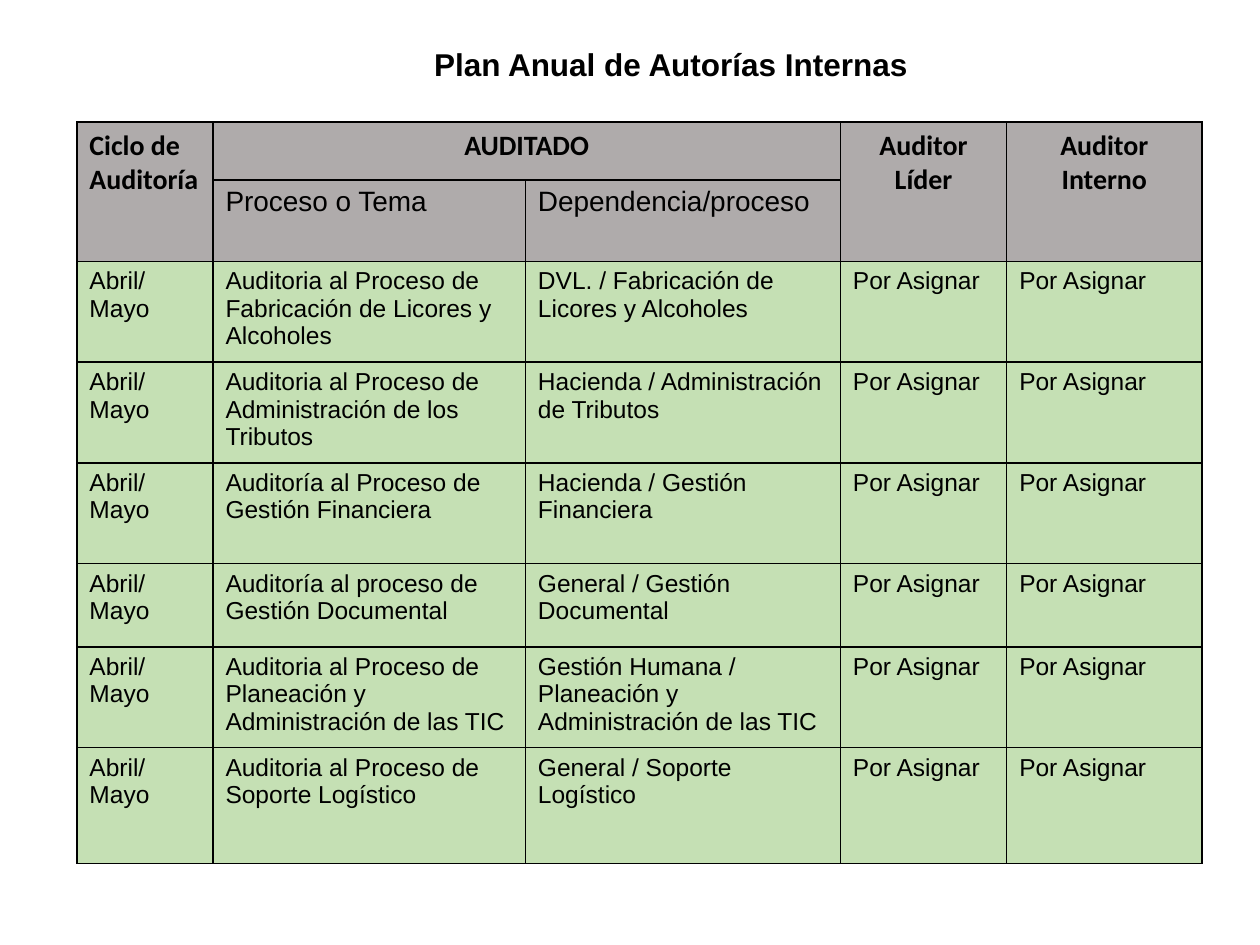
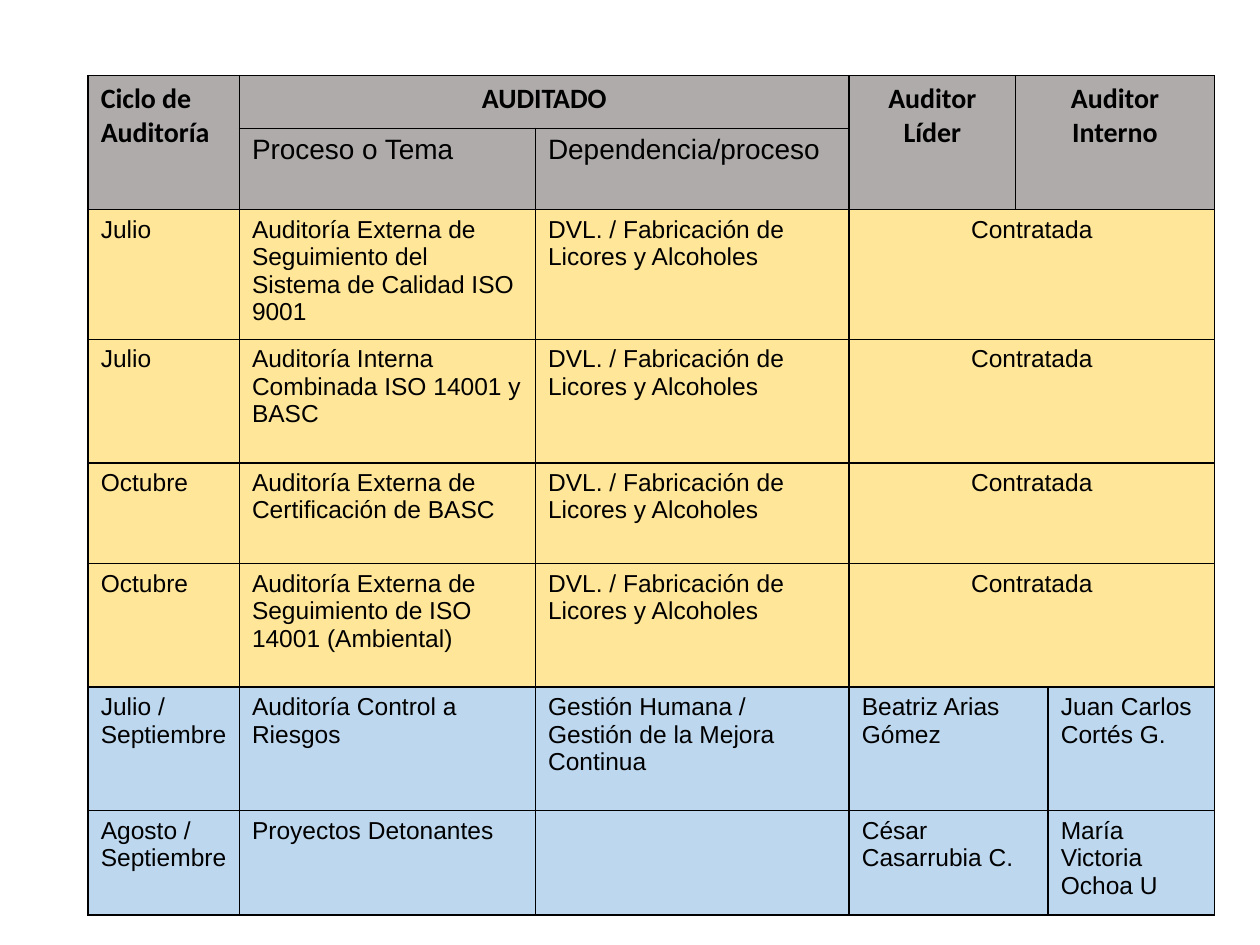
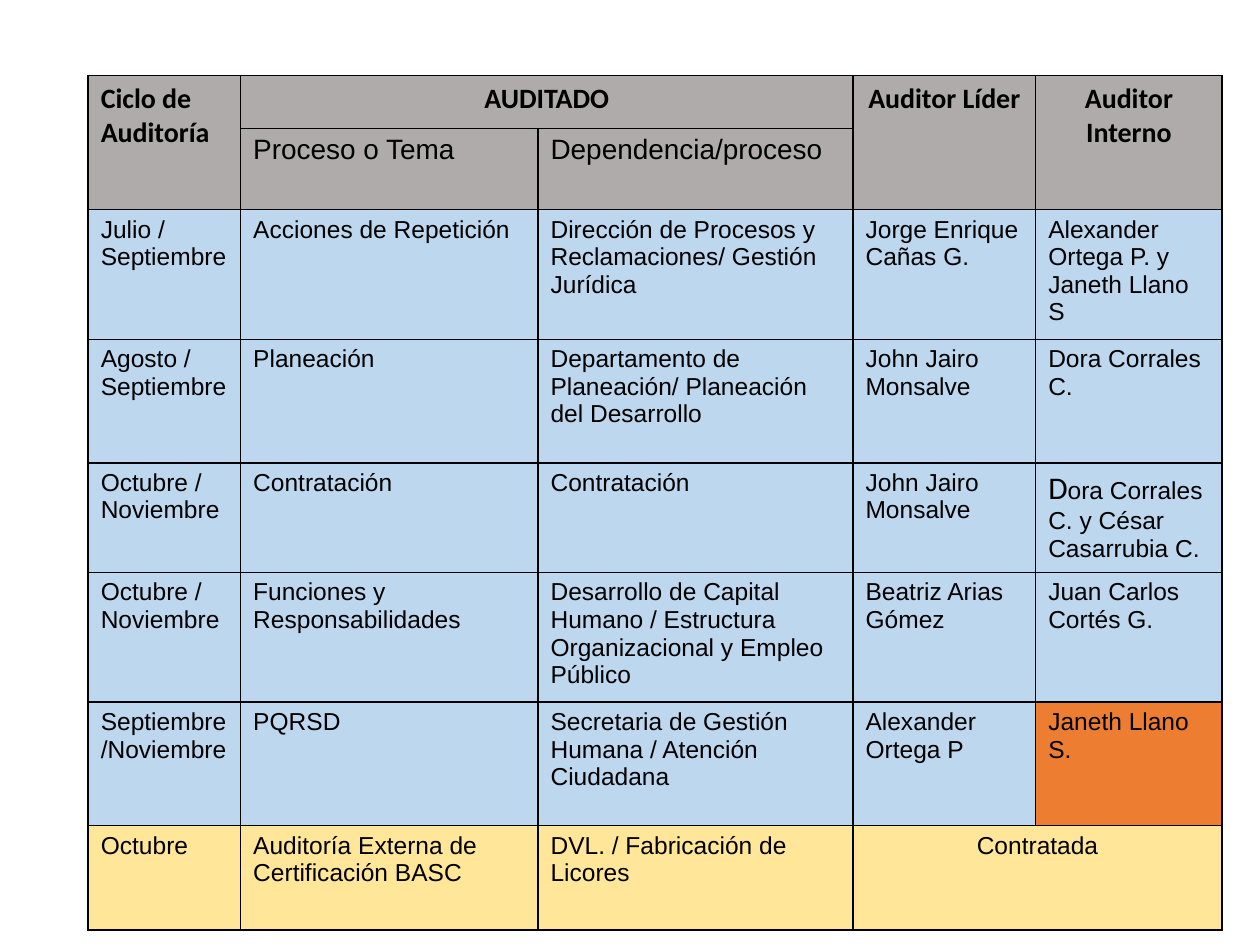
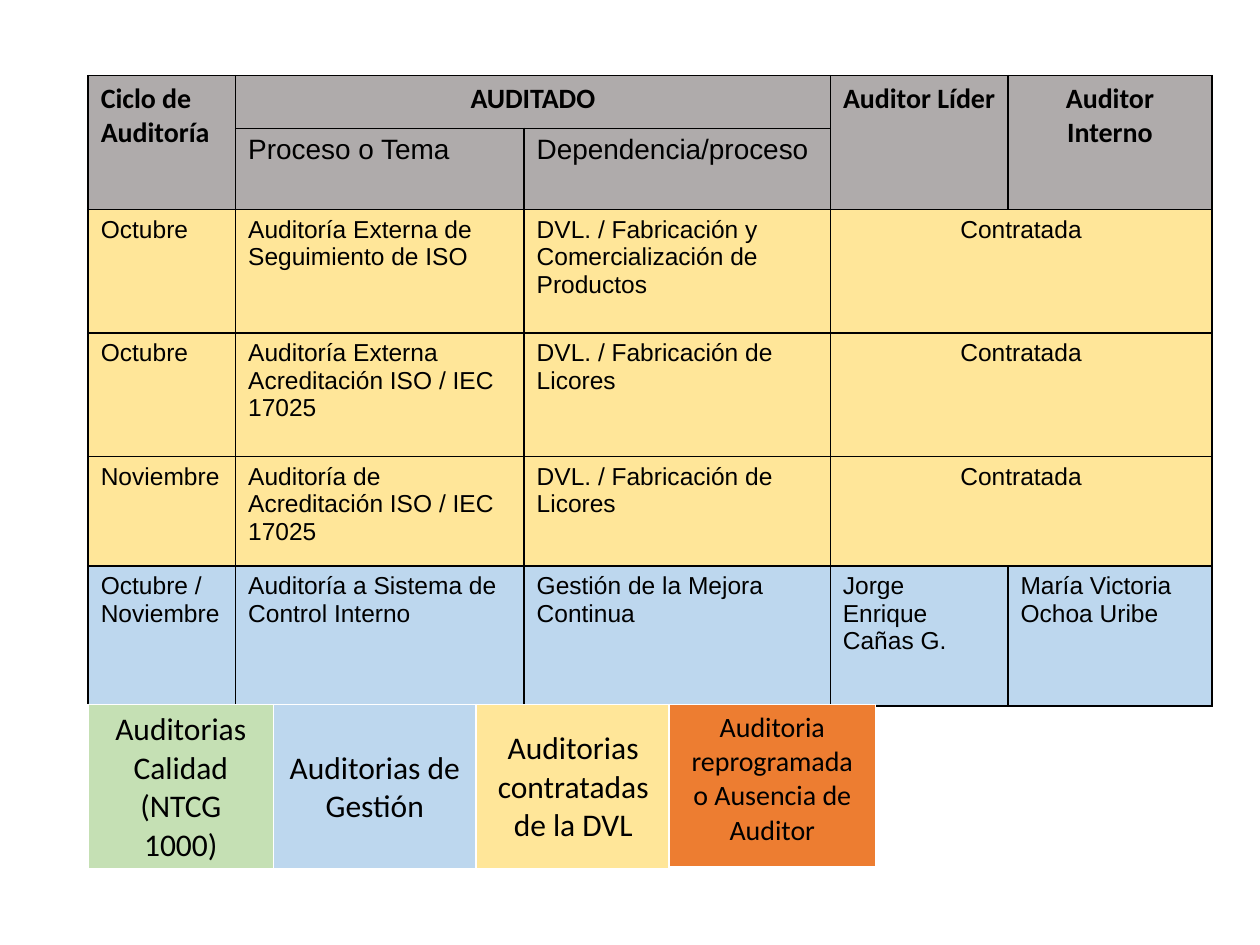
from dataclasses import dataclass

from lxml import etree
from pptx import Presentation
from pptx.dml.color import RGBColor
from pptx.enum.text import MSO_ANCHOR, PP_ALIGN
from pptx.oxml.ns import qn
from pptx.util import Inches, Pt

LEFT, CENTER = PP_ALIGN.LEFT, PP_ALIGN.CENTER
TOP, MIDDLE = MSO_ANCHOR.TOP, MSO_ANCHOR.MIDDLE
TITLE_LAYOUT, BLANK_LAYOUT = 5, 6


@dataclass(frozen=True)
class Theme:
    ink: str = "000000"
    paper: str = "FFFFFF"
    header: str = "AFABAB"
    quality: str = "C5E0B4"
    management: str = "BDD7EE"
    contracted: str = "FFE699"
    rescheduled: str = "ED7D31"
    body_font: str = "Arial"
    header_font: str = "Calibri"
    large: int = 18
    medium: int = 16
    small: int = 14


THEME = Theme()


@dataclass(frozen=True)
class Audit:
    fill: str
    cycle: str
    topic: str
    unit: str
    leader: str = "Contratada"
    auditor: str = ""
    auditor_fill: str = ""
    auditor_initial: str = ""


@dataclass(frozen=True)
class Plan:
    left: float
    top: float
    columns: tuple[float, ...]
    rows: tuple[float, ...]
    audits: tuple[Audit, ...]


@dataclass(frozen=True)
class LegendKey:
    text: str
    fill: str
    width: float


def quality_audit(topic: str, unit: str) -> Audit:
    return Audit(THEME.quality, "Abril/\nMayo", topic, unit, "Por Asignar", "Por Asignar")


def contracted_audit(cycle: str, topic: str, unit: str = "DVL. / Fabricación de Licores") -> Audit:
    return Audit(THEME.contracted, cycle, topic, unit)


def management_audit(cycle: str, topic: str, unit: str, leader: str, auditor: str, **extra: str) -> Audit:
    return Audit(THEME.management, cycle, topic, unit, leader, auditor, **extra)


SPIRITS = "DVL. / Fabricación de Licores y Alcoholes"

PLANS = (
    Plan(0.61, 0.97, (1.08, 2.48, 2.5, 1.32, 1.55),
         (0.46, 0.63, 0.8, 0.8, 0.8, 0.66, 0.8, 0.92), (
        quality_audit("Auditoria al Proceso de Fabricación de Licores y Alcoholes", SPIRITS),
        quality_audit("Auditoria al Proceso de Administración de los Tributos",
                      "Hacienda / Administración de Tributos"),
        quality_audit("Auditoría al Proceso de Gestión Financiera", "Hacienda / Gestión Financiera"),
        quality_audit("Auditoría al proceso de Gestión Documental", "General / Gestión Documental"),
        quality_audit("Auditoria al Proceso de Planeación y Administración de las TIC",
                      "Gestión Humana / Planeación y Administración de las TIC"),
        quality_audit("Auditoria al Proceso de Soporte Logístico", "General / Soporte Logístico"),
    )),
    Plan(0.7, 0.6, (1.2, 2.35, 2.49, 1.32, 0.26, 1.32),
         (0.42, 0.63, 1.03, 0.98, 0.8, 0.98, 0.98, 0.83), (
        contracted_audit("Julio", "Auditoría Externa de Seguimiento del Sistema de Calidad ISO 9001", SPIRITS),
        contracted_audit("Julio", "Auditoría Interna Combinada ISO 14001 y BASC", SPIRITS),
        contracted_audit("Octubre", "Auditoría Externa de Certificación de BASC", SPIRITS),
        contracted_audit("Octubre", "Auditoría Externa de Seguimiento de ISO 14001 (Ambiental)", SPIRITS),
        management_audit("Julio / Septiembre", "Auditoría Control a Riesgos",
                         "Gestión Humana / Gestión de la Mejora Continua",
                         "Beatriz Arias Gómez", "Juan Carlos Cortés G."),
        management_audit("Agosto / Septiembre", "Proyectos Detonantes", "",
                         "César Casarrubia C.", "María Victoria Ochoa U"),
    )),
    Plan(0.7, 0.6, (1.21, 2.36, 2.5, 1.45, 1.48),
         (0.42, 0.63, 1.03, 0.98, 0.87, 1.03, 0.98, 0.83), (
        management_audit("Julio / Septiembre", "Acciones de Repetición",
                         "Dirección de Procesos y Reclamaciones/ Gestión Jurídica",
                         "Jorge Enrique Cañas G.", "Alexander Ortega P. y Janeth Llano S"),
        management_audit("Agosto / Septiembre", "Planeación",
                         "Departamento de Planeación/ Planeación del Desarrollo",
                         "John Jairo Monsalve", "Dora Corrales C."),
        management_audit("Octubre / Noviembre", "Contratación", "Contratación", "John Jairo Monsalve",
                         "ora Corrales C. y César Casarrubia C.", auditor_initial="D"),
        management_audit("Octubre / Noviembre", "Funciones y Responsabilidades",
                         "Desarrollo de Capital Humano / Estructura Organizacional y Empleo Público",
                         "Beatriz Arias Gómez", "Juan Carlos Cortés G."),
        management_audit("Septiembre /Noviembre", "PQRSD",
                         "Secretaria de Gestión Humana / Atención Ciudadana",
                         "Alexander Ortega P", "Janeth Llano S.", auditor_fill=THEME.rescheduled),
        contracted_audit("Octubre", "Auditoría Externa de Certificación BASC"),
    )),
    Plan(0.7, 0.6, (1.17, 2.29, 2.43, 1.41, 1.62),
         (0.42, 0.63, 0.98, 0.98, 0.87, 1.11), (
        contracted_audit("Octubre", "Auditoría Externa de Seguimiento de ISO",
                         "DVL. / Fabricación y Comercialización de Productos"),
        contracted_audit("Octubre", "Auditoría Externa Acreditación ISO / IEC 17025"),
        contracted_audit("Noviembre", "Auditoría de Acreditación ISO / IEC 17025"),
        management_audit("Octubre / Noviembre", "Auditoría a Sistema de Control Interno",
                         "Gestión de la Mejora Continua",
                         "Jorge Enrique Cañas G.", "María Victoria Ochoa Uribe"),
    )),
)

LEGEND = (
    LegendKey("Auditorias Calidad (NTCG 1000)", THEME.quality, 1.47),
    LegendKey("Auditorias de Gestión", THEME.management, 1.61),
    LegendKey("Auditorias contratadas de la DVL", THEME.contracted, 1.54),
)
ABSENCE = LegendKey("Auditoria reprogramada o Ausencia de Auditor", THEME.rescheduled, 1.64)


def write_text(text_frame, text: str, *, size: int = THEME.small, font: str = THEME.body_font,
               bold: bool = False, align=LEFT, initial: str = "") -> None:
    for index, line in enumerate(text.split("\n")):
        paragraph = text_frame.add_paragraph() if index else text_frame.paragraphs[0]
        paragraph.alignment = align
        pieces = [(line, size, font)]
        if initial and not index:
            pieces.insert(0, (initial, THEME.large, THEME.header_font))
        for piece, piece_size, piece_font in pieces:
            if not piece:
                continue
            run = paragraph.add_run()
            run.text = piece
            run.font.size = Pt(piece_size)
            run.font.name = piece_font
            run.font.bold = bold
            run.font.color.rgb = RGBColor.from_string(THEME.ink)


def style_cell(cell, fill: str, border: str, bottom_width: int) -> None:
    properties = cell._tc.get_or_add_tcPr()
    for side, width in (("L", 1), ("R", 1), ("T", 1), ("B", bottom_width)):
        line = etree.SubElement(properties, qn(f"a:ln{side}"), w=str(Pt(width)))
        solid = etree.SubElement(line, qn("a:solidFill"))
        etree.SubElement(solid, qn("a:srgbClr"), val=border)
    cell.fill.solid()
    cell.fill.fore_color.rgb = RGBColor.from_string(fill)


def add_grid(slide, left: float, top: float, columns: tuple[float, ...], rows: tuple[float, ...],
             fills: list[list[str]], *, border: str = THEME.ink, bottom_width: int = 1):
    table = slide.shapes.add_table(
        len(rows), len(columns), Inches(left), Inches(top),
        Inches(sum(columns)), Inches(sum(rows))).table
    table.first_row = table.horz_banding = False
    for column, width in zip(table.columns, columns):
        column.width = Inches(width)
    for row, height, row_fills in zip(table.rows, rows, fills):
        row.height = Inches(height)
        for cell, fill in zip(row.cells, row_fills):
            style_cell(cell, fill, border, bottom_width)
    return table


def merge(table, row: int, column: int, last_row: int, last_column: int):
    cell = table.cell(row, column)
    if (row, column) != (last_row, last_column):
        cell.merge(table.cell(last_row, last_column))
    return cell


def add_header(table, last: int) -> None:
    headings = (
        ("Ciclo de Auditoría", 0, 1, 0, LEFT),
        ("AUDITADO", 1, 0, 2, CENTER),
        ("Auditor Líder", 3, 1, 3, CENTER),
        ("Auditor Interno", 4, 1, last, CENTER),
    )
    for text, column, last_row, last_column, align in headings:
        cell = merge(table, 0, column, last_row, last_column)
        write_text(cell.text_frame, text, size=THEME.medium, font=THEME.header_font, bold=True, align=align)
    for column, text in enumerate(("Proceso o Tema", "Dependencia/proceso"), start=1):
        write_text(table.cell(1, column).text_frame, text, size=THEME.medium)


def add_plan(slide, plan: Plan) -> None:
    last = len(plan.columns) - 1
    fills = [[THEME.header] * (last + 1)] * 2
    fills += [[audit.fill] * last + [audit.auditor_fill or audit.fill] for audit in plan.audits]
    table = add_grid(slide, plan.left, plan.top, plan.columns, plan.rows, fills)
    add_header(table, last)
    for row, audit in enumerate(plan.audits, start=2):
        for column, text in enumerate((audit.cycle, audit.topic, audit.unit)):
            write_text(table.cell(row, column).text_frame, text)
        leader_end = last - 1 if audit.auditor else last
        leader = merge(table, row, 3, row, leader_end)
        write_text(leader.text_frame, audit.leader, align=LEFT if audit.auditor else CENTER)
        if audit.auditor:
            write_text(table.cell(row, last).text_frame, audit.auditor, initial=audit.auditor_initial)


def add_legend(slide, left: float, keys: tuple[LegendKey, ...], size: int, anchor) -> None:
    table = add_grid(slide, left, 5.59, tuple(key.width for key in keys), (1.3,),
                     [[key.fill for key in keys]], border=THEME.paper, bottom_width=3)
    for cell, key in zip(table.rows[0].cells, keys):
        cell.vertical_anchor = anchor
        write_text(cell.text_frame, key.text, size=size, font=THEME.header_font, align=CENTER)


def add_title(slide, text: str) -> None:
    title = slide.shapes.title
    title.left, title.top = Inches(2.05), Inches(0.31)
    title.width, title.height = Inches(6.55), Inches(0.71)
    title.text_frame.vertical_anchor = TOP
    write_text(title.text_frame, text, size=THEME.large, bold=True, align=CENTER)


def main() -> None:
    presentation = Presentation()
    presentation.slide_width, presentation.slide_height = Inches(10), Inches(7.5)
    for index, plan in enumerate(PLANS):
        layout = BLANK_LAYOUT if index else TITLE_LAYOUT
        slide = presentation.slides.add_slide(presentation.slide_layouts[layout])
        add_plan(slide, plan)
        if not index:
            add_title(slide, "Plan Anual de Autorías Internas")
    add_legend(slide, 0.7, LEGEND, THEME.large, MIDDLE)
    add_legend(slide, 5.31, (ABSENCE,), THEME.medium, TOP)
    presentation.save("out.pptx")


if __name__ == "__main__":
    main()
